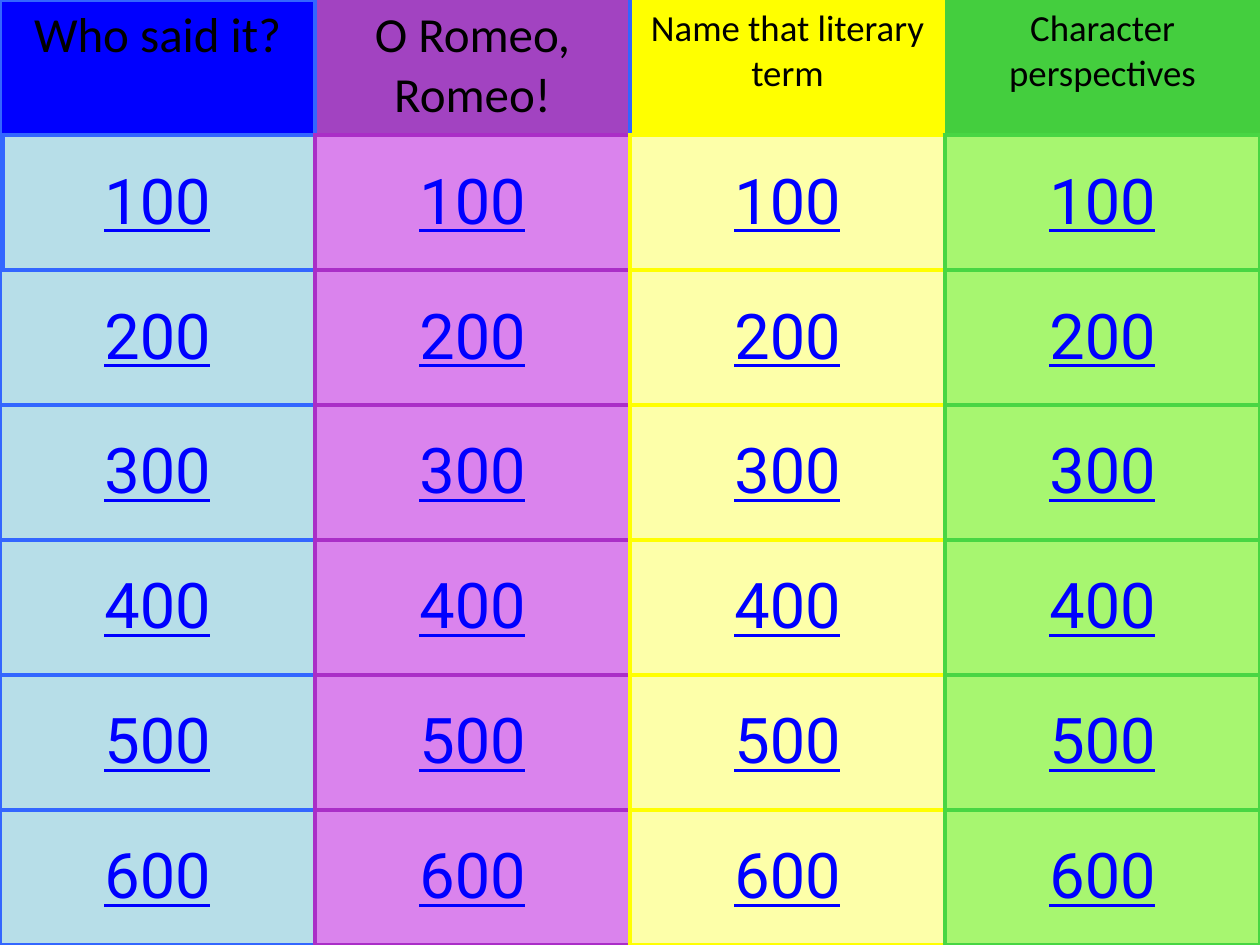
from lxml.etree import SubElement
from pptx import Presentation
from pptx.dml.color import RGBColor as Color
from pptx.enum.text import MSO_ANCHOR as Anchor, PP_ALIGN as Align
from pptx.oxml.ns import qn
from pptx.util import Inches, Pt

HEX = {
    "sky": "269BFF", "black": "000000", "link": "0000FF",
    "blue": "0000FF", "purple": "A243C1", "yellow": "FFFF00", "green": "44CE3E",
    "pale blue": "B7DEE8", "pale purple": "DA83ED",
    "pale yellow": "FDFFA9", "pale green": "A7F670",
    "blue line": "3366FF", "purple line": "AA2EC7",
    "yellow line": "FFFF00", "green line": "48D643",
}
TOPICS = [
    ("Who said it?", 28, "blue"),
    ("O Romeo, Romeo!", 28, "purple"),
    ("Name that literary term", 21, "yellow"),
    ("Character perspectives", 21, "green"),
]
POINTS = range(100, 700, 100)


def paint(fill, name):
    fill.solid()
    fill.fore_color.rgb = Color.from_string(HEX[name])


def rule(cell, side, name, width=3):
    props = cell._tc.get_or_add_tcPr()
    line = SubElement(props, qn("a:ln" + side), w=str(Pt(width)))
    if name:
        solid = SubElement(line, qn("a:solidFill"))
        SubElement(solid, qn("a:srgbClr"), val=HEX[name])
    else:
        SubElement(line, qn("a:noFill"))


def write(cell, text, size, font, name, link=False):
    para = cell.text_frame.paragraphs[0]
    para.alignment = Align.CENTER
    run = para.add_run()
    run.text = text
    run.font.size = Pt(size)
    run.font.name = font
    run.font.underline = link
    run.font.color.rgb = Color.from_string(HEX[name])


def add_topic(cell, col):
    text, size, hue = TOPICS[col]
    rule(cell, "L", "blue line" if col < 3 else None)
    rule(cell, "R", "blue line" if col < 2 else None)
    rule(cell, "T", "blue line" if col == 0 else None)
    rule(cell, "B", hue + " line")
    paint(cell.fill, hue)
    write(cell, text, size, "Calibri", "black")


def add_score(cell, col, score):
    hue = TOPICS[col][2]
    after = TOPICS[min(col + 1, len(TOPICS) - 1)][2]
    first = col == 0 and score == POINTS[0]
    rule(cell, "L", hue + " line", 6 if first else 3)
    rule(cell, "R", after + " line")
    rule(cell, "T", hue + " line")
    rule(cell, "B", hue + " line")
    paint(cell.fill, "pale " + hue)
    cell.vertical_anchor = Anchor.MIDDLE
    write(cell, str(score), 36, "Roboto", "link", True)


def add_board(slide, width, height):
    rows = len(POINTS) + 1
    frame = slide.shapes.add_table(rows, len(TOPICS), 0, 0, width, height)
    board = frame.table
    board.first_row = board.horz_banding = False
    for col in range(len(TOPICS)):
        add_topic(board.cell(0, col), col)
        for row, score in enumerate(POINTS, 1):
            add_score(board.cell(row, col), col, score)


def main():
    deck = Presentation()
    deck.slide_width, deck.slide_height = Inches(10), Inches(7.5)
    slide = deck.slides.add_slide(deck.slide_layouts[6])
    paint(slide.background.fill, "sky")
    add_board(slide, deck.slide_width, deck.slide_height)
    deck.save("out.pptx")


if __name__ == "__main__":
    main()
